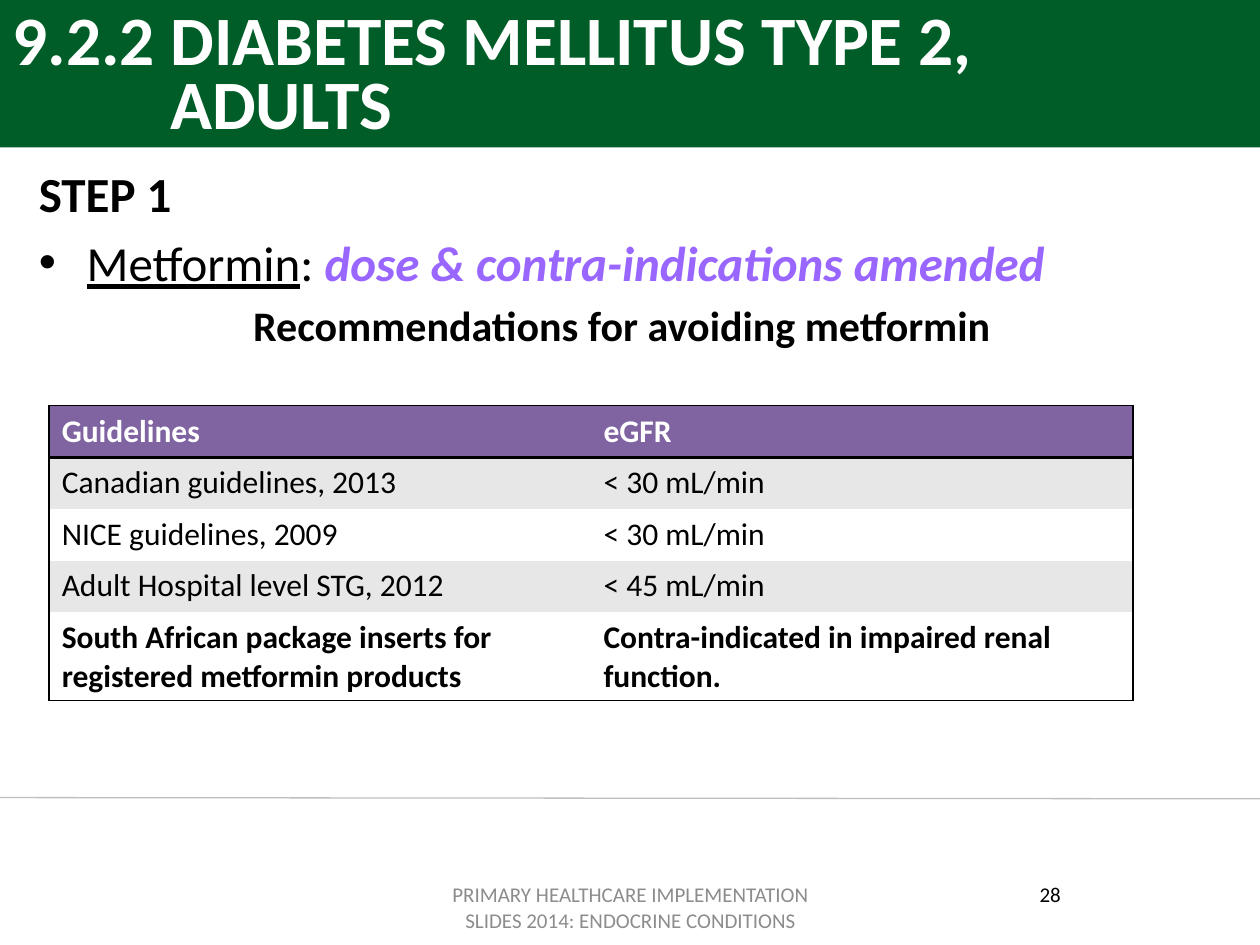
from lxml.etree import SubElement
from pptx import Presentation
from pptx.dml.color import RGBColor
from pptx.enum.shapes import MSO_CONNECTOR, MSO_SHAPE
from pptx.enum.text import MSO_ANCHOR, MSO_AUTO_SIZE, PP_ALIGN
from pptx.oxml.ns import qn
from pptx.util import Inches, Pt

GREEN = RGBColor(0x00, 0x5D, 0x28)
PURPLE = RGBColor(0x80, 0x64, 0xA2)
VIOLET = RGBColor(0x99, 0x66, 0xFF)
BAND_GREY = RGBColor(0xE7, 0xE7, 0xE7)
RULE_GREY = RGBColor(0xBF, 0xBF, 0xBF)
TEXT_GREY = RGBColor(0x8C, 0x8C, 0x8C)
BLACK = RGBColor(0, 0, 0)
WHITE = RGBColor(0xFF, 0xFF, 0xFF)

ROWS = [
    ("Guidelines", "eGFR"),
    ("Canadian guidelines, 2013", "< 30 mL/min"),
    ("NICE guidelines, 2009", "< 30 mL/min"),
    ("Adult Hospital level STG, 2012", "< 45 mL/min"),
    ("South African package inserts for registered metformin products",
     "Contra-indicated in impaired renal function."),
]


def add_span(para, text, size, color=BLACK, **formats):
    span = para.add_run()
    span.text = text
    span.font.color.rgb = color
    for name, value in {"name": "Calibri", "size": Pt(size), **formats}.items():
        setattr(span.font, name, value)


def set_indent(para, left, first=0, bullet=None):
    properties = para._p.get_or_add_pPr()
    properties.set("marL", str(Inches(left)))
    properties.set("indent", str(Inches(first)))
    if bullet:
        SubElement(properties, qn("a:buFont"), typeface="Arial")
        SubElement(properties, qn("a:buChar"), char=bullet)


def add_text_box(page, box):
    frame = page.shapes.add_textbox(*map(Inches, box)).text_frame
    frame.word_wrap = True
    return frame


def add_heading(page, box):
    """Place the title over a green band as wide as the slide."""
    left, top, width, height = box
    band = page.shapes.add_shape(MSO_SHAPE.RECTANGLE, *map(Inches, box))
    band.shadow.inherit = False
    band.fill.solid()
    band.fill.fore_color.rgb = GREEN
    band.line.fill.background()

    title = page.shapes.title
    title.element.addprevious(band.element)
    place = {"left": left, "top": top, "width": width - 0.5, "height": height + 0.08}
    for name, value in place.items():
        setattr(title, name, Inches(value))
    frame = title.text_frame
    frame.auto_size = MSO_AUTO_SIZE.NONE
    frame.vertical_anchor = MSO_ANCHOR.MIDDLE
    lines = [("9.2.2 DIABETES MELLITUS TYPE 2,", 0), ("ADULTS", 1.25)]
    for number, (text, indent) in enumerate(lines):
        para = frame.add_paragraph() if number else frame.paragraphs[0]
        para.alignment = PP_ALIGN.LEFT
        para.line_spacing = 0.77
        set_indent(para, indent)
        add_span(para, text, 39.6, WHITE, bold=True)


def add_body(page, box):
    frame = add_text_box(page, box)
    paragraphs = [
        (28, None, PP_ALIGN.LEFT, [("STEP 1", BLACK, {"bold": True})]),
        (28, "•", PP_ALIGN.LEFT, [
            ("Metformin", BLACK, {"underline": True}),
            (": ", BLACK, {}),
            ("dose & contra-indications amended", VIOLET,
             {"bold": True, "italic": True}),
        ]),
        (24, None, PP_ALIGN.CENTER,
         [("Recommendations for avoiding metformin", BLACK, {"bold": True})]),
    ]
    for number, (size, bullet, alignment, spans) in enumerate(paragraphs):
        para = frame.add_paragraph() if number else frame.paragraphs[0]
        para.alignment = alignment
        para.space_before = Pt(size * 0.2)
        set_indent(para, 0.38, -0.38, bullet)
        for text, color, formats in spans:
            add_span(para, text, size, color, **formats)


def set_borders(cell, widths):
    """Draw black borders; widths maps the sides L, R, T, B to points."""
    properties = cell._tc.get_or_add_tcPr()
    for side in "LRTB":
        width = widths.get(side, 0)
        line = SubElement(properties, qn(f"a:ln{side}"), w=str(Pt(width)))
        if width:
            fill = SubElement(line, qn("a:solidFill"))
            SubElement(fill, qn("a:srgbClr"), val=str(BLACK))
        else:
            SubElement(line, qn("a:noFill"))


def add_guideline_table(page, box):
    last = len(ROWS) - 1
    table = page.shapes.add_table(len(ROWS), 2, *map(Inches, box)).table
    for number, texts in enumerate(ROWS):
        table.rows[number].height = Inches(0.7 if number == last else 0.41)
        for column, text in enumerate(texts):
            cell = table.cell(number, column)
            widths = {"R" if column else "L": 1}
            if number == 0:
                widths.update(T=1, B=2)
            elif number == 1:
                widths["T"] = 2
            elif number == last:
                widths["B"] = 1
            set_borders(cell, widths)
            cell.fill.solid()
            cell.fill.fore_color.rgb = (
                PURPLE if number == 0 else BAND_GREY if number % 2 else WHITE)
            add_span(cell.text_frame.paragraphs[0], text, 18,
                     BLACK if number else WHITE, bold=number in (0, last))


def add_footer(page, box):
    """Place the rule at the top of the box, the caption and number below."""
    left, top, width, height = box
    rule = page.shapes.add_connector(
        MSO_CONNECTOR.STRAIGHT, Inches(left), Inches(top),
        Inches(left + width), Inches(top + 0.01))
    rule.line.color.rgb = RULE_GREY
    rule.line.width = Pt(0.75)
    SubElement(rule.element.spPr, qn("a:effectLst"))
    notes = [
        (3.42, 3.17, TEXT_GREY,
         "PRIMARY HEALTHCARE IMPLEMENTATION SLIDES 2014: ENDOCRINE CONDITIONS"),
        (7.17, 2.33, BLACK, "28"),
    ]
    for offset, note_width, color, text in notes:
        frame = add_text_box(page, (left + offset, top + 0.62, note_width, 0.4))
        para = frame.paragraphs[0]
        para.alignment = PP_ALIGN.CENTER
        add_span(para, text, 12, color)


def main():
    deck = Presentation()
    deck.slide_width, deck.slide_height = Inches(10), Inches(7.5)
    page = deck.slides.add_slide(deck.slide_layouts[5])
    add_heading(page, (0, 0, 10, 1.17))
    add_body(page, (0.21, 1.25, 9.45, 5.31))
    add_guideline_table(page, (0.39, 3.22, 8.6, 2.34))
    add_footer(page, (0, 6.33, 10, 1.17))
    deck.save("out.pptx")


if __name__ == "__main__":
    main()
